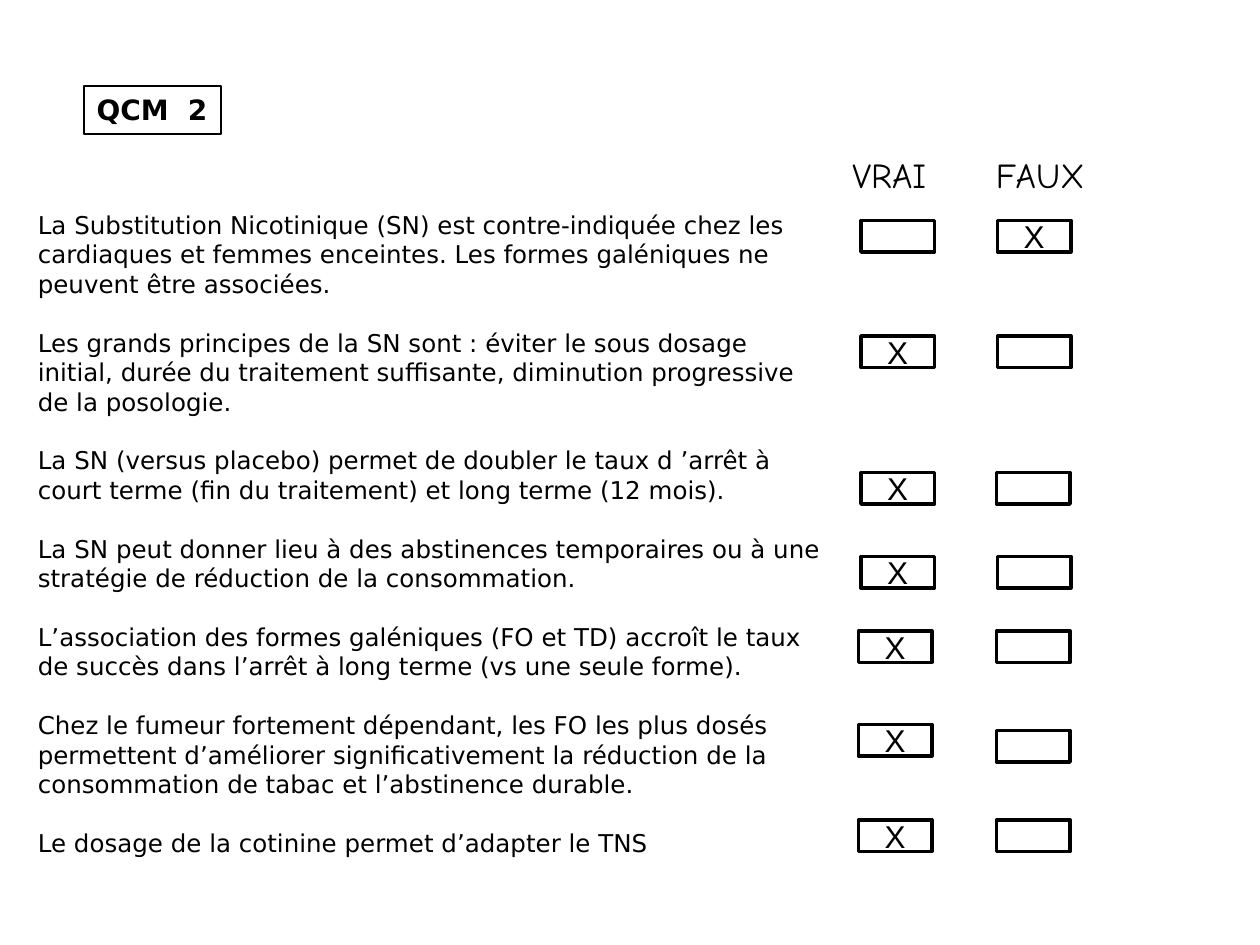
from lxml.etree import SubElement
from pptx import Presentation
from pptx.dml.color import RGBColor
from pptx.enum.shapes import MSO_SHAPE
from pptx.enum.text import MSO_ANCHOR, PP_ALIGN
from pptx.oxml.ns import qn
from pptx.util import Pt

BLACK = RGBColor(0, 0, 0)
WIDTH, HEIGHT = 42, 18
LINE_PITCH = 16.8

STATEMENTS = [
    "La Substitution Nicotinique (SN) est contre-indiquée chez les cardiaques et femmes enceintes. Les formes galéniques ne peuvent être associées.",
    "Les grands principes de la SN sont : éviter le sous dosage initial, durée du traitement suffisante, diminution progressive de la posologie.",
    "La SN (versus placebo) permet de doubler le taux d ’arrêt à court terme (fin du traitement) et long terme (12 mois).",
    "La SN peut donner lieu à des abstinences temporaires ou à une stratégie de réduction de la consommation.",
    "L’association des formes galéniques (FO et TD) accroît le taux de succès dans l’arrêt à long terme (vs une seule forme).",
    "Chez le fumeur fortement dépendant, les FO les plus dosés permettent d’améliorer significativement la réduction de la consommation de tabac et l’abstinence durable.",
    "Le dosage de la cotinine permet d’adapter le TNS",
]

ANSWERS = [
    ((492, 126), (570, 126), False),
    ((492, 192), (570, 192), True),
    ((492, 270), (569.5, 270), True),
    ((492, 318), (570, 318), True),
    ((490.5, 360.5), (569.5, 360.5), True),
    ((490.5, 414), (569.5, 417.5), True),
    ((490.5, 468.5), (569.5, 468.5), True),
]


def write_text(paragraph, text, *, size, font, bold=False, align=PP_ALIGN.LEFT, before=0, tab=None):
    paragraph.text = text
    paragraph.alignment = align
    paragraph.space_before = Pt(before)
    if tab:
        tabs = SubElement(paragraph._p.get_or_add_pPr(), qn("a:tabLst"))
        SubElement(tabs, qn("a:tab"), pos=str(Pt(tab)), algn="l")
    paragraph.font.size = Pt(size)
    paragraph.font.name = font
    paragraph.font.bold = bold
    paragraph.font.color.rgb = BLACK


def add_title(slide, text):
    title = slide.shapes.title
    title.left, title.top, title.width, title.height = Pt(48), Pt(49), Pt(78.5), Pt(27.5)
    title.line.color.rgb = BLACK
    title.line.width = Pt(1)
    frame = title.text_frame
    frame.word_wrap = False
    frame.vertical_anchor = MSO_ANCHOR.TOP
    write_text(frame.paragraphs[0], text, size=16, font="DejaVu Sans", bold=True)


def add_text_box(slide, left, top, width, height):
    frame = slide.shapes.add_textbox(Pt(left), Pt(top), Pt(width), Pt(height)).text_frame
    frame.word_wrap = True
    return frame


def add_statements(slide):
    frame = add_text_box(slide, 14.5, 116.5, 461.5, 376)
    for index, statement in enumerate(STATEMENTS):
        paragraph = frame.add_paragraph() if index else frame.paragraphs[0]
        write_text(paragraph, statement, size=14, font="DejaVu Sans",
                   before=LINE_PITCH if index else 0)


def add_headings(slide):
    frame = add_text_box(slide, 480, 84, 180, 31)
    write_text(frame.paragraphs[0], "VRAI\tFAUX", size=20, font="Comic Neue", tab=82)


def add_answer_box(slide, position, checked):
    left, top = position
    box = slide.shapes.add_shape(MSO_SHAPE.RECTANGLE, Pt(left), Pt(top), Pt(WIDTH), Pt(HEIGHT))
    box.shadow.inherit = False
    box.fill.background()
    box.line.color.rgb = BLACK
    box.line.width = Pt(2)
    if checked:
        frame = box.text_frame
        frame.word_wrap = False
        frame.vertical_anchor = MSO_ANCHOR.MIDDLE
        write_text(frame.paragraphs[0], "X", size=18, font="Arial", align=PP_ALIGN.CENTER)


def main():
    presentation = Presentation()
    presentation.slide_width, presentation.slide_height = Pt(720), Pt(540)
    slide = presentation.slides.add_slide(presentation.slide_layouts[5])
    add_title(slide, "QCM  2")
    add_statements(slide)
    add_headings(slide)
    for true_position, false_position, is_true in ANSWERS:
        add_answer_box(slide, true_position, is_true)
        add_answer_box(slide, false_position, not is_true)
    presentation.save("out.pptx")


if __name__ == "__main__":
    main()
